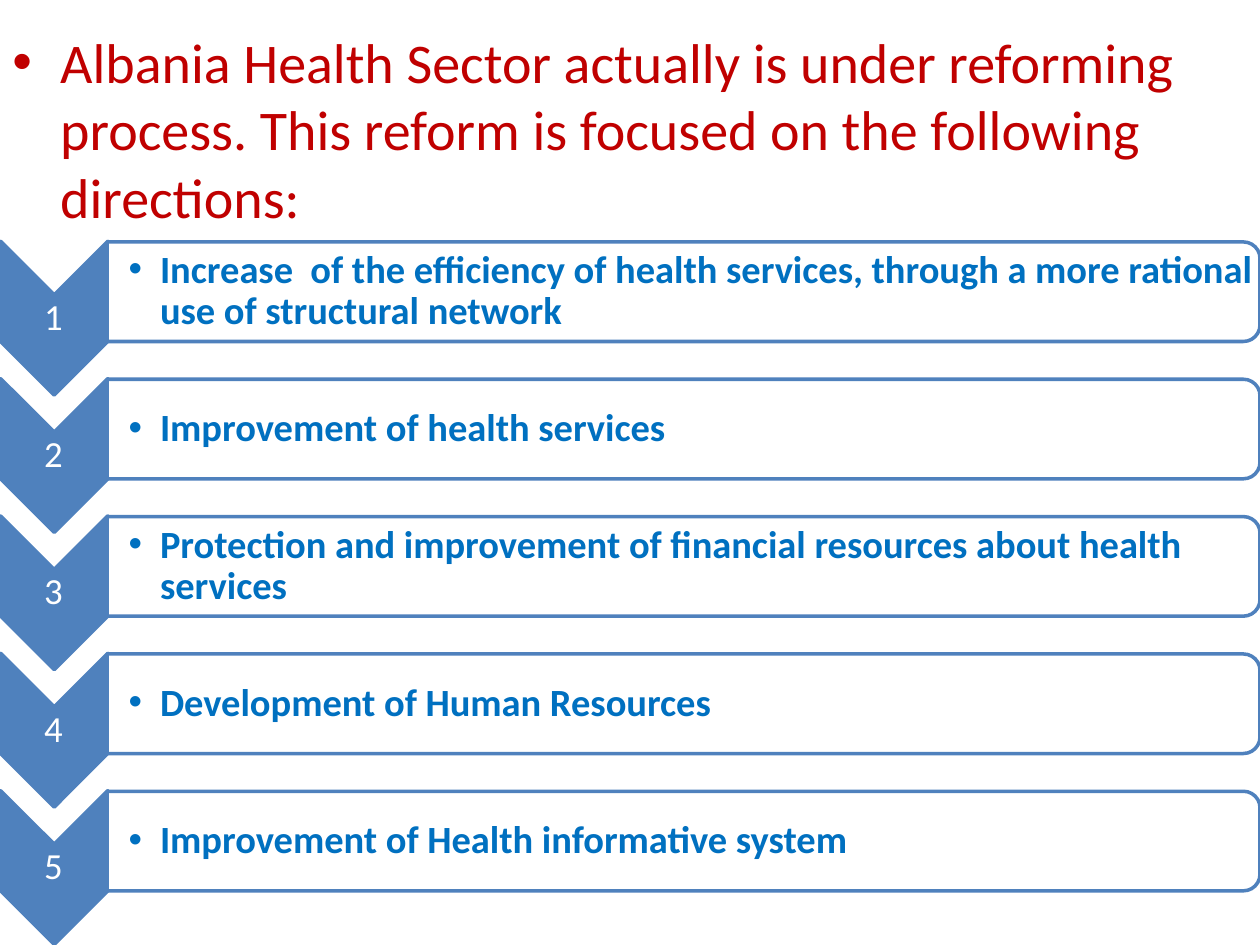
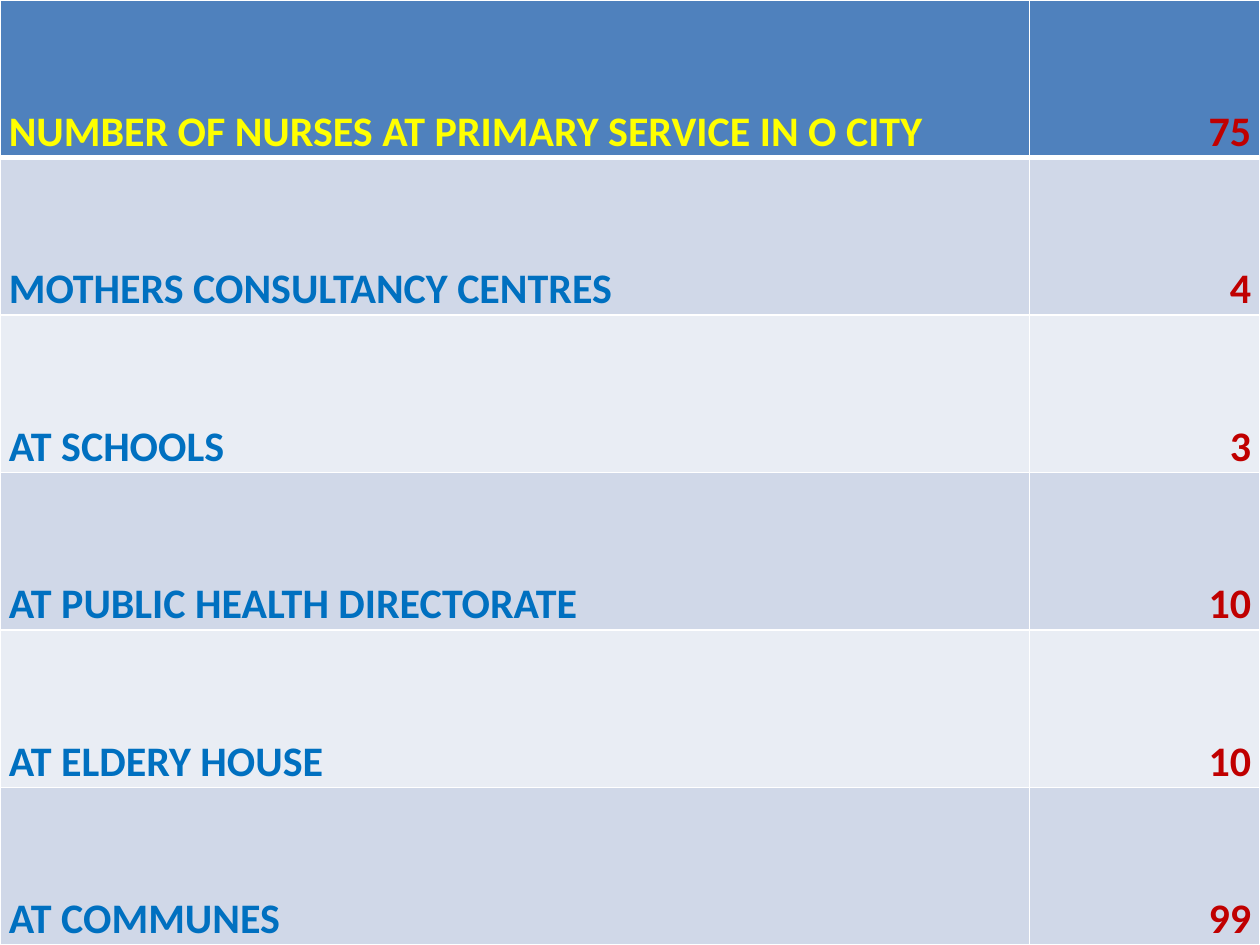
import pptx
import pptx.util
import pptx.dml.color
import pptx.enum.shapes
import pptx.enum.text
import pptx.oxml
import pptx.oxml.ns
import lxml.etree

Inches = pptx.util.Inches
Pt = pptx.util.Pt
RGBColor = pptx.dml.color.RGBColor
KIND = pptx.enum.shapes.MSO_SHAPE
ALIGN = pptx.enum.text.PP_ALIGN
ANCHOR = pptx.enum.text.MSO_ANCHOR

WHITE = RGBColor(0xFF, 0xFF, 0xFF)
STEEL = RGBColor(0x4F, 0x81, 0xBD)
BLUE = RGBColor(0x00, 0x70, 0xC0)
RED = RGBColor(0xC0, 0x00, 0x00)
YELLOW = RGBColor(0xFF, 0xFF, 0x00)
BANDS = [RGBColor(0xE9, 0xED, 0xF4), RGBColor(0xD0, 0xD8, 0xE8)]


def write(frame, text, size, color, bold=False, align=ALIGN.LEFT, space=1.0, indent=0):
    para = frame.paragraphs[0]
    para.alignment = align
    para.line_spacing = space
    run = para.add_run()
    run.text = text
    run.font.name = "Calibri"
    run.font.size = Pt(size)
    run.font.bold = bold
    run.font.color.rgb = color
    if indent:
        props = para._p.get_or_add_pPr()
        props.set("marL", str(Inches(indent)))
        props.set("indent", str(-Inches(indent)))
        for tag, key, value in [("a:buFont", "typeface", "Arial"), ("a:buChar", "char", "•")]:
            lxml.etree.SubElement(props, pptx.oxml.ns.qn(tag)).set(key, value)


def add_box(slide, left, top, width, height, side, edge, anchor):
    frame = slide.shapes.add_textbox(Inches(left), Inches(top), Inches(width), Inches(height)).text_frame
    frame.word_wrap = True
    frame.vertical_anchor = anchor
    frame.margin_left = Inches(side)
    frame.margin_right = frame.margin_top = frame.margin_bottom = Inches(edge)
    return frame


deck = pptx.Presentation()
deck.slide_width = Inches(10)
deck.slide_height = Inches(7.5)
blank = deck.slide_layouts[6]

slide = deck.slides.add_slide(blank)
intro = add_box(slide, 0, 0.17, 9.83, 1.7, 0.1, 0.05, ANCHOR.TOP)
write(intro, "Albania Health Sector actually is under reforming process. "
      "This reform is focused on the following directions:", 32, RED, indent=0.38)

goals = [
    "Increase  of the efficiency of health services, through a more rational use of structural network",
    "Improvement of health services",
    "Protection and improvement of financial resources about health services",
    "Development of Human Resources",
    "Improvement of Health informative system",
]
for index, goal in enumerate(goals):
    shift = index * 1.09
    for kind, left, top, width, height, fill in [
        (KIND.CHEVRON, -0.18, 2.1, 1.22, 0.85, STEEL),
        (KIND.ROUND_2_SAME_RECTANGLE, 5.03, -2.26, 0.79, 9.15, WHITE),
    ]:
        shape = slide.shapes.add_shape(
            kind, Inches(left), Inches(top + shift), Inches(width), Inches(height))
        shape.rotation = 90
        shape.shadow.inherit = False
        shape.fill.solid()
        shape.fill.fore_color.rgb = fill
        shape.line.color.rgb = STEEL
        shape.line.width = Pt(2)
    label = add_box(slide, 0, 2.34 + shift, 0.85, 0.37, 0.01, 0.01, ANCHOR.MIDDLE)
    write(label, str(index + 1), 21, WHITE, align=ALIGN.CENTER, space=0.9)
    body = add_box(slide, 0.85, 1.96 + shift, 9.11, 0.71, 0.17, 0.02, ANCHOR.MIDDLE)
    write(body, goal, 22, BLUE, bold=True, space=0.9, indent=0.25)

slide = deck.slides.add_slide(blank)
counts = [
    ("NUMBER OF NURSES AT PRIMARY SERVICE IN O CITY", "75"),
    ("MOTHERS CONSULTANCY CENTRES", "4"),
    ("AT SCHOOLS", "3"),
    ("AT PUBLIC HEALTH DIRECTORATE", "10"),
    ("AT ELDERY HOUSE", "10"),
    ("AT COMMUNES", "99"),
]
table = slide.shapes.add_table(len(counts), 2, 0, 0, Inches(10), Inches(7.5)).table
table.columns[0].width = Inches(8.17)
table.columns[1].width = Inches(1.83)
for row, texts in enumerate(counts):
    table.rows[row].height = Inches(1.25)
    for col, text in enumerate(texts):
        cell = table.cell(row, col)
        cell.vertical_anchor = ANCHOR.BOTTOM
        cell.margin_left = cell.margin_right = Inches(0.07)
        cell.margin_top = cell.margin_bottom = 0
        color = RED if col else BLUE if row else YELLOW
        align = ALIGN.RIGHT if col else ALIGN.LEFT
        write(cell.text_frame, text, 24, color, bold=True, align=align, space=1.15)
        props = cell._tc.get_or_add_tcPr()
        for side in ["L", "R", "T", "B"]:
            thick = (row == 0 and side == "B") or (row == 1 and side == "T")
            props.append(pptx.oxml.parse_xml(
                f'<a:ln{side} {pptx.oxml.ns.nsdecls("a")} w="{Pt(3 if thick else 1)}">'
                f'<a:solidFill><a:srgbClr val="{WHITE}"/></a:solidFill></a:ln{side}>'))
        cell.fill.solid()
        cell.fill.fore_color.rgb = BANDS[row % 2] if row else STEEL

deck.save("out.pptx")
